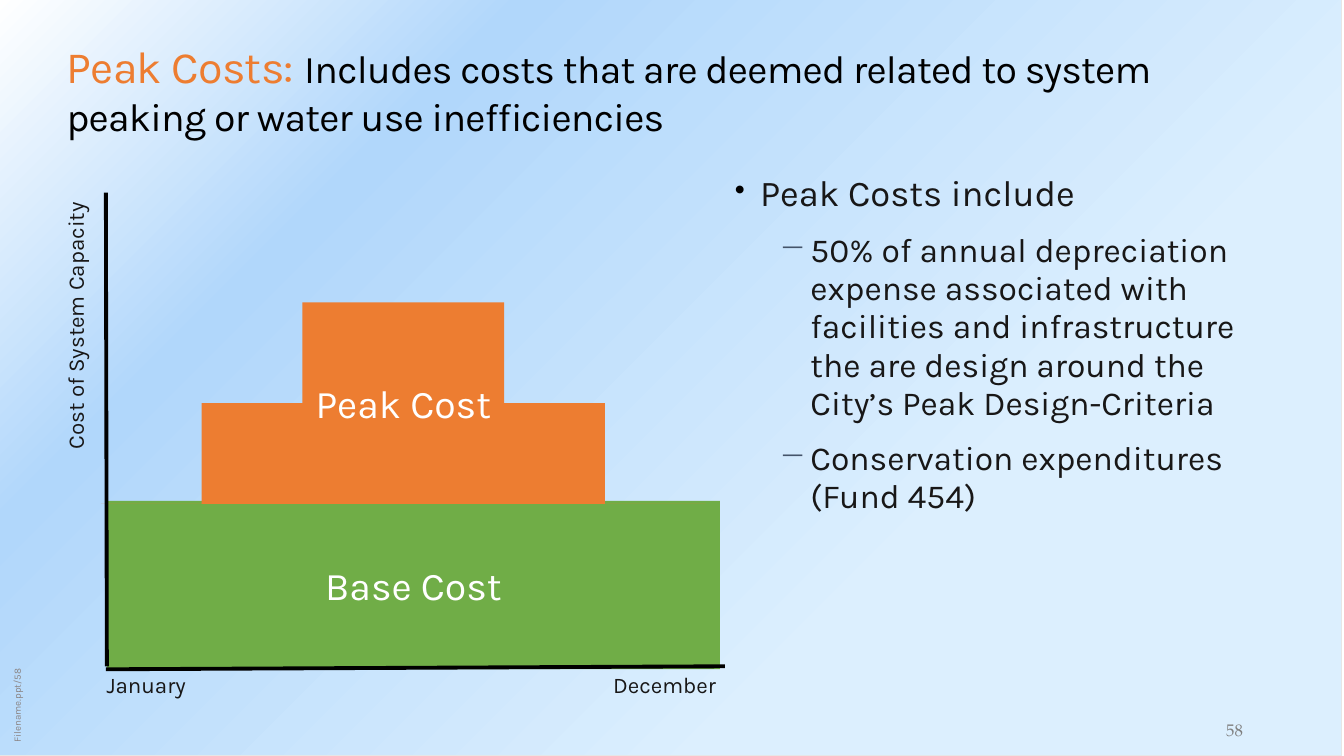
"""Build the Peak Costs slide: a seasonal cost curve beside its explanation."""
from lxml import etree
from pptx import Presentation, oxml, util as u
from pptx.dml.color import RGBColor
from pptx.enum import shapes, text
from pptx.oxml import ns

BLACK = RGBColor(0, 0, 0)
WHITE = RGBColor(255, 255, 255)
INK = RGBColor(0x18, 0x17, 0x17)
ORANGE = RGBColor(0xED, 0x7D, 0x31)
GREEN = RGBColor(0x70, 0xAD, 0x47)
SLATE = RGBColor(0x44, 0x54, 0x6A)
GREY = RGBColor(0x80, 0x80, 0x80)
WARM_GREY = RGBColor(0x8B, 0x85, 0x85)
PALE = RGBColor(0xE7, 0xE6, 0xE6)
SANS, SERIF = "Karla", "TeX Gyre Pagella"
LEFT, RIGHT, TOP, BASE_TOP, FLOOR = 1.05, 7.14, 1.91, 4.97, 6.61


def style(font, size, color, name=SANS):
    font.name, font.size, font.color.rgb = name, u.Pt(size), color


def write(shape, words, size, color, align, anchor, margin=None, name=SANS):
    frame = shape.text_frame
    frame.text = words
    frame.word_wrap = True
    frame.vertical_anchor = anchor
    if margin is not None:
        frame.margin_left = frame.margin_right = u.Inches(margin)
        frame.margin_top = frame.margin_bottom = u.Inches(margin)
    frame.paragraphs[0].alignment = align
    style(frame.paragraphs[0].runs[0].font, size, color, name)


deck = Presentation()
deck.slide_width, deck.slide_height = u.Inches(13.33), u.Inches(7.5)
slide = deck.slides.add_slide(deck.slide_layouts[5])
items = slide.shapes
align, anchor = text.PP_ALIGN, text.MSO_ANCHOR

backdrop = items.add_shape(shapes.MSO_SHAPE.RECTANGLE, u.Inches(-0.02), 0,
                           deck.slide_width, deck.slide_height)
backdrop.shadow.inherit = False
backdrop.line.color.rgb, backdrop.line.width = PALE, u.Pt(0.75)
stops = "".join(f'<a:gs pos="{share * 1000}"><a:srgbClr val="{color}"/></a:gs>'
                for share, color in ((30, "DCEFFE"), (75, "B1D7FB"), (100, "FFFFFF")))
glow = oxml.parse_xml(
    f'<a:gradFill {ns.nsdecls("a")} rotWithShape="1"><a:gsLst>{stops}</a:gsLst>'
    '<a:path path="circle"><a:fillToRect l="100000" t="100000"/></a:path></a:gradFill>')
backdrop._element.spPr.find(ns.qn("a:prstGeom")).addnext(glow)
items._spTree.insert(2, backdrop._element)

title = items.title
title.left, title.top = u.Inches(0.56), u.Inches(0.33)
title.width, title.height = u.Inches(12.22), u.Inches(1.17)
title.text_frame.auto_size = text.MSO_AUTO_SIZE.NONE
title.text_frame.vertical_anchor = anchor.TOP
heading = title.text_frame.paragraphs[0]
heading.alignment = align.LEFT
for words, size, color in (
        ("Peak Costs: ", 32, ORANGE),
        ("Includes costs that are deemed related to system peaking or water use inefficiencies",
         28, BLACK)):
    run = heading.add_run()
    run.text = words
    style(run.font, size, color)
    run.font._element.set("spc", "-50")

points = items.add_textbox(u.Inches(7.19), u.Inches(1.67), u.Inches(5.58), u.Inches(5.25)).text_frame
points.word_wrap = True
points.text = "\n".join((
    "Peak Costs include",
    "50% of annual depreciation expense associated with facilities and infrastructure "
    "the are design around the City’s Peak Design-Criteria",
    "Conservation expenditures (Fund 454)"))
for index, point in enumerate(points.paragraphs):
    if index:
        point.level, point.space_before = 1, u.Pt(12)
        margin, hang, mark, mark_color, mark_size, size = 0.75, 0.31, "−", SLATE, 100, 24
    else:
        margin, hang, mark, mark_color, mark_size, size = 0.25, 0.25, "•", BLACK, 82, 26
    props = point._p.get_or_add_pPr()
    props.set("marL", str(u.Inches(margin)))
    props.set("indent", str(-u.Inches(hang)))
    bullet_color = etree.SubElement(props, ns.qn("a:buClr"))
    etree.SubElement(bullet_color, ns.qn("a:srgbClr"), val=str(mark_color))
    etree.SubElement(props, ns.qn("a:buSzPct"), val=str(mark_size * 1000))
    etree.SubElement(props, ns.qn("a:buChar"), char=mark)
    point.line_spacing = 0.95
    style(point.runs[0].font, size, INK)

base = items.add_shape(shapes.MSO_SHAPE.RECTANGLE, u.Inches(1.06), u.Inches(BASE_TOP),
                       u.Inches(RIGHT - 1.06), u.Inches(1.67))

curve = [(1.02, BASE_TOP)]
for bend in (((1.02, BASE_TOP), (2.78, 4.45), (3.06, 3.18), (4.08, 3.18)),
             ((4.08, 3.18), (5.1, 3.18), (5.29, 4.35), (RIGHT, 4.99))):
    for step in range(1, 41):
        t = step / 40
        weights = ((1 - t) ** 3, 3 * t * (1 - t) ** 2, 3 * t * t * (1 - t), t ** 3)
        curve.append(tuple(sum(w * p[axis] for w, p in zip(weights, bend)) for axis in (0, 1)))
outline = items.build_freeform(*curve[0], scale=u.Inches(1))
outline.add_line_segments(curve[1:], close=True)
peak = outline.convert_to_shape()

for area, words, color in ((base, "Base Cost", GREEN), (peak, "Peak Cost", ORANGE)):
    area.shadow.inherit = False
    area.fill.solid()
    area.fill.fore_color.rgb = color
    area.line.fill.background()
    write(area, words, 28, WHITE, align.CENTER, anchor.MIDDLE)

for ends in ((LEFT, TOP, 1.06, FLOOR), (7.19, FLOOR, LEFT, 6.64)):
    axis_line = items.add_connector(shapes.MSO_CONNECTOR.STRAIGHT, *map(u.Inches, ends))
    axis_line.line.color.rgb, axis_line.line.width = BLACK, u.Pt(2.75)
    etree.SubElement(axis_line._element.spPr, ns.qn("a:effectLst"))

for words, place, turn, size, color, side, hold, margin, name in (
        ("Cost of System Capacity", (-0.79, 3.26, 3.11, 0.41), 270, 16, INK,
         align.RIGHT, anchor.TOP, None, SANS),
        ("January", (0.96, FLOOR, 1.91, 0.44), 0, 16, INK, align.LEFT, anchor.TOP, None, SANS),
        ("December", (5.69, FLOOR, 1.51, 0.44), 0, 16, INK, align.RIGHT, anchor.TOP, None, SANS),
        ("Filename.ppt/58", (-1.17, 5.97, 2.67, 0.22), 270, 7, WARM_GREY,
         align.LEFT, anchor.BOTTOM, 0.05, SANS),
        ("58", (11.79, 7.09, 0.91, 0.3), 0, 12, GREY, align.CENTER, anchor.BOTTOM, 0.05, SERIF)):
    label = items.add_textbox(*map(u.Inches, place))
    label.rotation = turn
    write(label, words, size, color, side, hold, margin, name)

deck.save("out.pptx")
